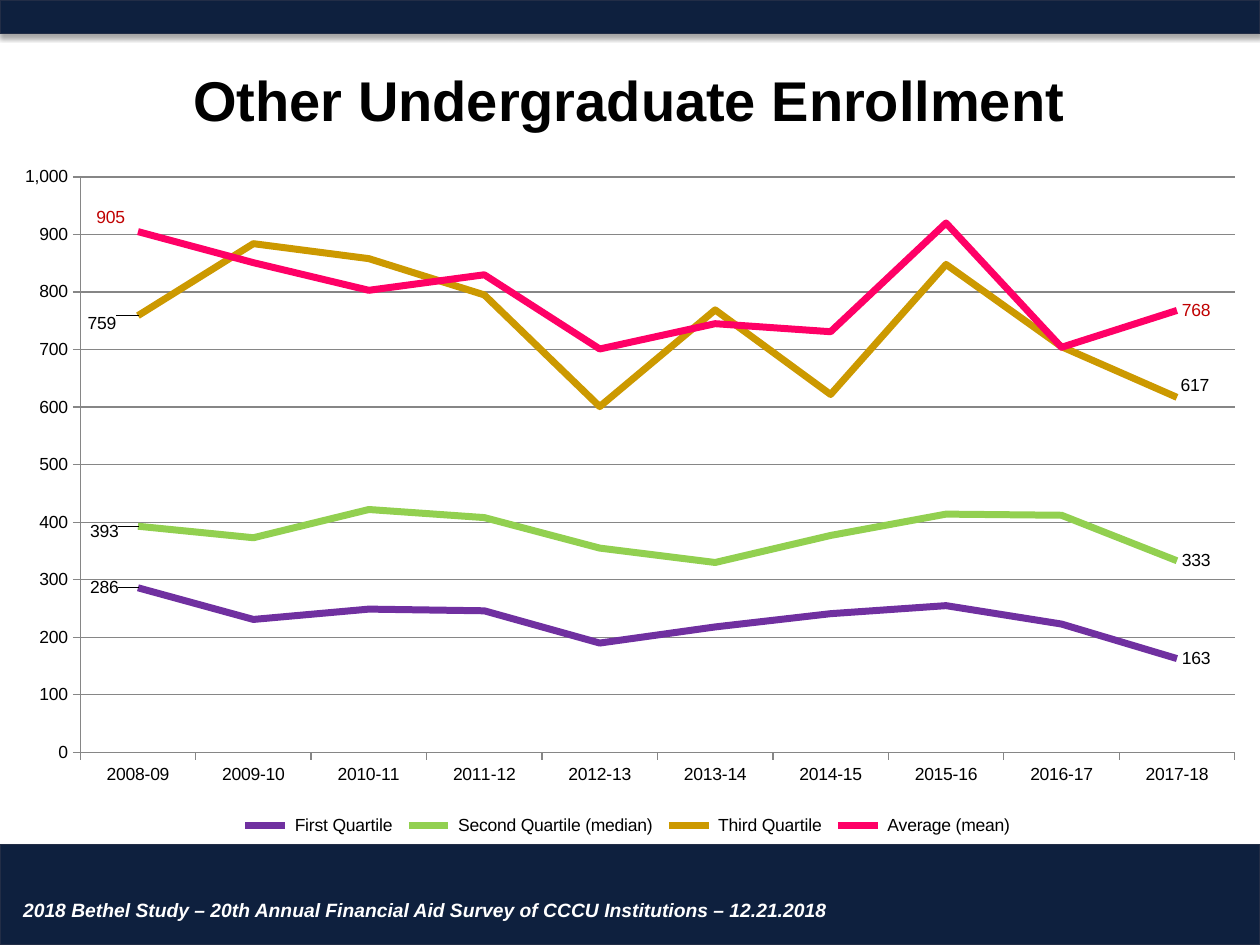
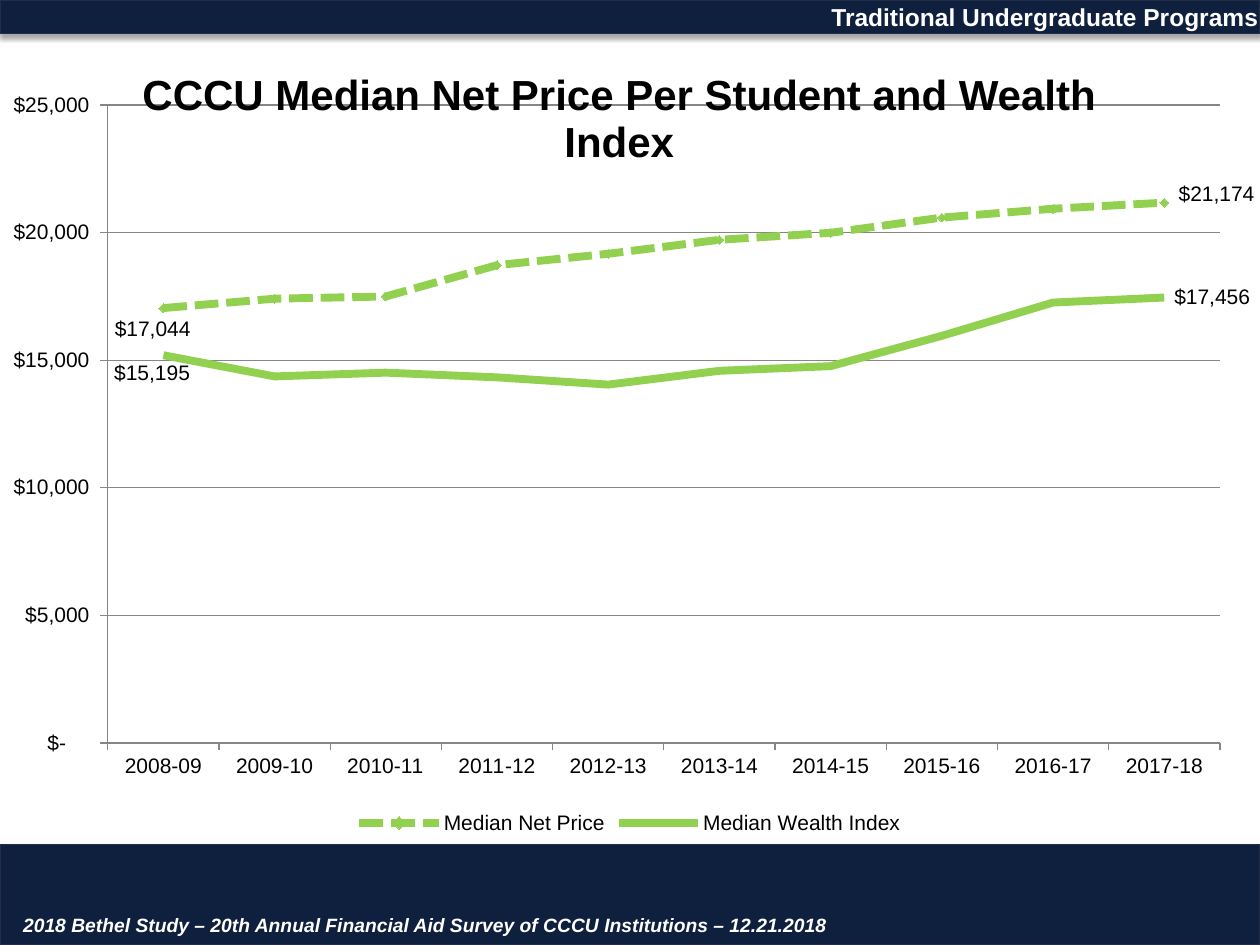
from dataclasses import dataclass
from typing import NamedTuple, Optional

from lxml.etree import SubElement
from pptx import Presentation
from pptx.chart.data import CategoryChartData
from pptx.dml.color import RGBColor
from pptx.enum.chart import XL_CHART_TYPE as ChartType
from pptx.enum.chart import XL_LABEL_POSITION as LabelPosition
from pptx.enum.chart import XL_LEGEND_POSITION as LegendPosition
from pptx.enum.chart import XL_MARKER_STYLE as MarkerStyle
from pptx.enum.chart import XL_TICK_MARK as TickMark
from pptx.enum.dml import MSO_LINE
from pptx.enum.shapes import MSO_SHAPE
from pptx.enum.text import MSO_ANCHOR, MSO_AUTO_SIZE, PP_ALIGN
from pptx.oxml import parse_xml
from pptx.oxml.ns import nsdecls, qn
from pptx.util import Inches, Pt

COLUMNS, ROWS = 100, 75
SLIDE_WIDTH, SLIDE_HEIGHT = Inches(10), Inches(7.5)
COLUMN, ROW = SLIDE_WIDTH / COLUMNS, SLIDE_HEIGHT / ROWS
TITLE_ONLY = 5


@dataclass(frozen=True)
class Theme:
    font: str = "Arial"
    navy: str = "0E203E"
    edge: str = "222D46"
    white: str = "FFFFFF"
    black: str = "000000"
    grid: str = "868686"
    purple: str = "7030A0"
    green: str = "92D050"
    gold: str = "CC9900"
    pink: str = "FF0066"
    red: str = "C00000"
    footer_size: float = 11
    header_size: float = 14
    hairline: float = 0.75
    title_spacing: float = 0.95


THEME = Theme()


class Region(NamedTuple):
    left: float
    top: float
    width: float
    height: float

    def lengths(self) -> tuple:
        return (round(self.left * COLUMN), round(self.top * ROW),
                round(self.width * COLUMN), round(self.height * ROW))


class Nudge(NamedTuple):
    columns: float = 0
    rows: float = 0


@dataclass(frozen=True)
class Series:
    name: str
    values: tuple
    color: str
    first_label: Nudge
    last_label: Nudge = Nudge()
    label_color: str = THEME.black
    dash: Optional[MSO_LINE] = None
    marker: MarkerStyle = MarkerStyle.NONE


@dataclass(frozen=True)
class ChartSlide:
    title: str
    title_region: Region
    title_size: float
    footer_region: Region
    chart_region: Region
    plot_region: Region
    kind: ChartType
    text_size: float
    line_width: float
    maximum: float
    step: float
    axis_format: str
    label_format: str
    series: tuple
    header: str = ""


YEARS = [f"{year}-{year % 100 + 1:02}" for year in range(2008, 2018)]
FOOTER = ("2018 Bethel Study – 20th Annual Financial Aid Survey of "
          "CCCU Institutions – 12.21.2018")
BANDS = (Region(0, 0, COLUMNS, 2.65), Region(0, 67, COLUMNS, 8))
HEADER_REGION = Region(65, -0.35, 35, 3.4)

SLIDES = (
    ChartSlide(
        title="Other Undergraduate Enrollment",
        title_region=Region(5.1, 4.6, 89.7, 7),
        title_size=32,
        footer_region=Region(0.85, 70.85, 73.3, 2.7),
        chart_region=Region(0, 2.5, COLUMNS, 64.2),
        plot_region=Region(6.37, 11.55, 91.63, 45.68),
        kind=ChartType.LINE,
        text_size=10,
        line_width=4,
        maximum=1000,
        step=100,
        axis_format="#,##0",
        label_format="#,##0",
        series=(
            Series(" First Quartile ",
                   (286, 231, 249, 246, 190, 218, 241, 255, 223, 163),
                   THEME.purple, Nudge(-4.2, 0)),
            Series(" Second Quartile (median) ",
                   (393, 373, 422, 408, 355, 330, 377, 414, 412, 333),
                   THEME.green, Nudge(-4.2, 0.4)),
            Series(" Third Quartile ",
                   (759, 884, 858, 795, 601, 769, 622, 848, 705, 617),
                   THEME.gold, Nudge(-4.4, 0.6), Nudge(-0.1, -0.9)),
            Series(" Average (mean) ",
                   (905, 851, 803, 830, 701, 745, 731, 920, 704, 768),
                   THEME.pink, Nudge(-3.7, -1.1), label_color=THEME.red),
        ),
    ),
    ChartSlide(
        title="CCCU Median Net Price Per Student and Wealth Index",
        title_region=Region(9.15, 5.5, 80, 8),
        title_size=24,
        footer_region=Region(0.85, 71.9, 73.3, 3),
        chart_region=Region(0, 3, COLUMNS, 63.6),
        plot_region=Region(8.55, 5.34, 88.27, 50.63),
        kind=ChartType.LINE_MARKERS,
        text_size=12,
        line_width=4.5,
        maximum=25000,
        step=5000,
        axis_format='_("$"* #,##0_);_("$"* \\(#,##0\\);_("$"* "-"??_);_(@_)',
        label_format='"$"#,##0',
        series=(
            Series("Median Net Price",
                   (17044, 17410, 17496, 18725, 19170,
                    19718, 19993, 20590, 20936, 21174),
                   THEME.green, Nudge(-4.6, 1.7), Nudge(0.4, -0.7),
                   dash=MSO_LINE.SQUARE_DOT, marker=MarkerStyle.DIAMOND),
            Series("Median Wealth Index",
                   (15195, 14365, 14513, 14327, 14044,
                    14585, 14766, 15954, 17259, 17456),
                   THEME.green, Nudge(-4.3, 1.4), Nudge(0.4, 0)),
        ),
        header="Traditional Undergraduate Programs",
    ),
)


def rgb(color: str) -> RGBColor:
    return RGBColor.from_string(color)


def style_font(font, size: float, color: str, bold: bool = False, italic: bool = False) -> None:
    font.name = THEME.font
    font.size = Pt(size)
    font.color.rgb = rgb(color)
    font.bold = bold
    font.italic = italic


def add_bands(deck, page) -> None:
    tree = deck.slide_master.shapes.element
    for position, region in enumerate(BANDS, start=2):
        band = page.shapes.add_shape(MSO_SHAPE.RECTANGLE, *region.lengths())
        band.fill.solid()
        band.fill.fore_color.rgb = rgb(THEME.navy)
        band.line.color.rgb = rgb(THEME.edge)
        band.line.width = Pt(THEME.hairline)
        band.shadow.inherit = False
        effects = band.element.spPr.find(qn("a:effectLst"))
        shadow = SubElement(effects, qn("a:outerShdw"), blurRad=str(Pt(3.1)),
                            dist=str(Pt(1.8)), dir="5400000", rotWithShape="0")
        tint = SubElement(shadow, qn("a:srgbClr"), val=THEME.black)
        SubElement(tint, qn("a:alpha"), val="35000")
        tree.insert(position, band.element)


def add_label(page, text: str, region: Region, size: float, italic: bool = False) -> None:
    box = page.shapes.add_textbox(*region.lengths())
    frame = box.text_frame
    frame.text = text
    frame.word_wrap = True
    frame.vertical_anchor = MSO_ANCHOR.MIDDLE
    frame.margin_right = frame.margin_top = frame.margin_bottom = 0
    style_font(frame.paragraphs[0].runs[0].font, size, THEME.white, True, italic)


def place_title(page, content: ChartSlide) -> None:
    title = page.shapes.title
    title.left, title.top, title.width, title.height = content.title_region.lengths()
    frame = title.text_frame
    frame.text = content.title
    frame.word_wrap = True
    frame.auto_size = MSO_AUTO_SIZE.NONE
    frame.vertical_anchor = MSO_ANCHOR.MIDDLE
    frame.margin_left = frame.margin_right = frame.margin_top = frame.margin_bottom = 0
    para = frame.paragraphs[0]
    para.alignment = PP_ALIGN.CENTER
    para.line_spacing = THEME.title_spacing
    style_font(para.runs[0].font, content.title_size, THEME.black, True)
    page.shapes.element.append(title.element)


def layout_xml(x: float, y: float, size: str = "", target: str = "", modes: str = ""):
    return parse_xml(
        f'<c:layout {nsdecls("c")}><c:manualLayout>{target}{modes}'
        f'<c:x val="{x:.4f}"/><c:y val="{y:.4f}"/>{size}</c:manualLayout></c:layout>')


def fix_plot_area(chart, content: ChartSlide) -> None:
    area, plot = content.chart_region, content.plot_region
    size = (f'<c:w val="{plot.width / area.width:.4f}"/>'
            f'<c:h val="{plot.height / area.height:.4f}"/>')
    layout = layout_xml(plot.left / area.width, plot.top / area.height, size,
                        '<c:layoutTarget val="inner"/>',
                        '<c:xMode val="edge"/><c:yMode val="edge"/>')
    plot_area = chart.element.find(".//" + qn("c:plotArea"))
    for former in plot_area.findall(qn("c:layout")):
        plot_area.remove(former)
    plot_area.insert(0, layout)


def style_axes(chart, content: ChartSlide) -> None:
    for axis in (chart.category_axis, chart.value_axis):
        axis.major_tick_mark = TickMark.OUTSIDE
        axis.minor_tick_mark = TickMark.NONE
        axis.format.line.color.rgb = rgb(THEME.grid)
        axis.format.line.width = Pt(THEME.hairline)
        style_font(axis.tick_labels.font, content.text_size, THEME.black)
    values = chart.value_axis
    values.minimum_scale, values.maximum_scale = 0, content.maximum
    values.major_unit = content.step
    values.tick_labels.number_format = content.axis_format
    values.tick_labels.number_format_is_linked = False
    values.major_gridlines.format.line.color.rgb = rgb(THEME.grid)
    values.major_gridlines.format.line.width = Pt(THEME.hairline)


def style_series(chart, content: ChartSlide) -> None:
    area = content.chart_region
    for line, entry in zip(chart.plots[0].series, content.series):
        line.smooth = False
        line.format.line.color.rgb = rgb(entry.color)
        line.format.line.width = Pt(content.line_width)
        if entry.dash is not None:
            line.format.line.dash_style = entry.dash
        line.marker.style = entry.marker
        if entry.marker != MarkerStyle.NONE:
            line.marker.size = 5
            line.marker.format.fill.solid()
            line.marker.format.fill.fore_color.rgb = rgb(entry.color)
            line.marker.format.line.color.rgb = rgb(entry.color)
        line.data_labels.show_value = False
        line.data_labels.number_format = content.label_format
        line.data_labels.number_format_is_linked = False
        for index in (0, len(YEARS) - 1):
            label = line.points[index].data_label
            style_font(label.font, content.text_size, entry.label_color)
            label.position = LabelPosition.RIGHT
    for node, entry in zip(chart.element.iter(qn("c:ser")), content.series):
        nudges = (entry.first_label, entry.last_label)
        for label, nudge in zip(node.iter(qn("c:dLbl")), nudges):
            number_format = parse_xml(f'<c:numFmt {nsdecls("c")} sourceLinked="0"/>')
            number_format.set("formatCode", content.label_format)
            label.insert(1, number_format)
            if nudge != Nudge():
                label.insert(1, layout_xml(nudge.columns / area.width,
                                           nudge.rows / area.height))


def add_line_chart(page, content: ChartSlide) -> None:
    data = CategoryChartData(number_format=content.label_format)
    data.categories = YEARS
    for entry in content.series:
        data.add_series(entry.name, entry.values)
    chart = page.shapes.add_chart(content.kind, *content.chart_region.lengths(), data).chart
    chart.has_title = False
    style_font(chart.font, content.text_size, THEME.black)
    chart.has_legend = True
    chart.legend.position = LegendPosition.BOTTOM
    chart.legend.include_in_layout = False
    style_font(chart.legend.font, content.text_size, THEME.black)
    chart.plots[0].vary_by_categories = False
    style_axes(chart, content)
    style_series(chart, content)
    fix_plot_area(chart, content)


def main() -> None:
    deck = Presentation()
    deck.slide_width, deck.slide_height = SLIDE_WIDTH, SLIDE_HEIGHT
    for number, content in enumerate(SLIDES):
        page = deck.slides.add_slide(deck.slide_layouts[TITLE_ONLY])
        if number == 0:
            add_bands(deck, page)
        add_label(page, FOOTER, content.footer_region, THEME.footer_size, italic=True)
        if content.header:
            add_label(page, content.header, HEADER_REGION, THEME.header_size)
        add_line_chart(page, content)
        place_title(page, content)
    deck.save("out.pptx")


if __name__ == "__main__":
    main()
